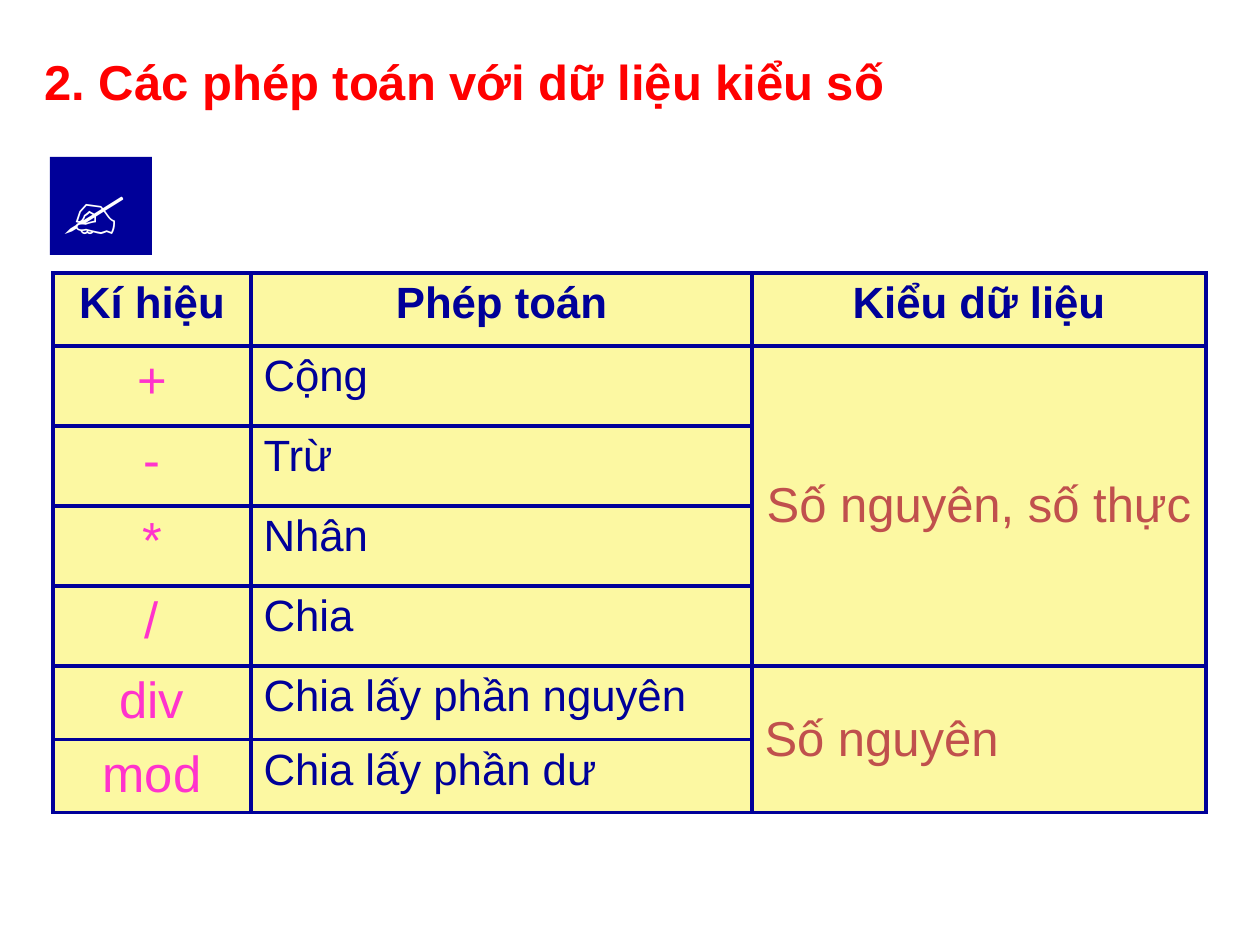
import pptx
import pptx.util
import pptx.dml.color
import pptx.enum.shapes
import pptx.enum.text
import pptx.oxml
import pptx.oxml.ns

EMU_PER_PX = 914400 / 126
FONT = "Arial"
COLORS = {
    "navy": "000099",
    "cream": "FCF8A2",
    "pink": "FF33CC",
    "brick": "C0504D",
    "red": "FF0000",
    "white": "FFFFFF",
}
ALIGN = pptx.enum.text.PP_ALIGN
ANCHOR = pptx.enum.text.MSO_ANCHOR

HEADERS = ["Kí hiệu", "Phép toán", "Kiểu dữ liệu"]
OPERATIONS = [
    ("+", "Cộng"),
    ("-", "Trừ"),
    ("*", "Nhân"),
    ("/", "Chia"),
    ("div", "Chia lấy phần nguyên"),
    ("mod", "Chia lấy phần dư"),
]
# first row, last row, text, alignment
DATA_TYPES = [
    (1, 4, "Số nguyên, số thực", ALIGN.CENTER),
    (5, 6, "Số nguyên", ALIGN.LEFT),
]
COLUMN_WIDTHS = [198, 501, 454]
ROW_HEIGHTS = [73, 80, 80, 80, 80, 74, 73]


def px(length):
    return pptx.util.Emu(round(length * EMU_PER_PX))


def rgb(name):
    return pptx.dml.color.RGBColor.from_string(COLORS[name])


def write(text_frame, text, size, color, align=ALIGN.LEFT, bold=False):
    text_frame.text = text
    paragraph = text_frame.paragraphs[0]
    paragraph.alignment = align
    font = paragraph.runs[0].font
    font.name = FONT
    font.size = pptx.util.Pt(size)
    font.bold = bold
    font.color.rgb = rgb(color)
    return paragraph


def add_title(slide, text):
    title = slide.shapes.title
    title.left, title.top, title.width, title.height = map(px, (32, 53, 1166, 63))
    paragraph = write(title.text_frame, text, 28, "red", bold=True)
    paragraph.line_spacing = 0.9
    title.text_frame.word_wrap = True
    title.text_frame.auto_size = pptx.enum.text.MSO_AUTO_SIZE.NONE
    title.text_frame.vertical_anchor = ANCHOR.MIDDLE


def add_icon_box(slide, symbol):
    box = slide.shapes.add_shape(
        pptx.enum.shapes.MSO_SHAPE.RECTANGLE, px(50), px(157), px(102), px(98))
    box.shadow.inherit = False
    box.fill.solid()
    box.fill.fore_color.rgb = rgb("navy")
    box.line.fill.background()
    write(box.text_frame, symbol, 40, "white")
    box.text_frame.word_wrap = True
    box.text_frame.vertical_anchor = ANCHOR.TOP


def style_cell(cell):
    cell.fill.solid()
    cell.fill.fore_color.rgb = rgb("cream")
    # Borders come before the fill in the cell properties
    properties = cell._tc.get_or_add_tcPr()
    for index, side in enumerate(("lnL", "lnR", "lnT", "lnB")):
        properties.insert(index, pptx.oxml.parse_xml(
            f'<a:{side} {pptx.oxml.ns.nsdecls("a")} w="{pptx.util.Pt(2.25)}">'
            f'<a:solidFill><a:srgbClr val="{COLORS["navy"]}"/></a:solidFill>'
            f'</a:{side}>'))


def add_operations_table(slide):
    table = slide.shapes.add_table(
        len(ROW_HEIGHTS), len(COLUMN_WIDTHS), px(53), px(273),
        px(sum(COLUMN_WIDTHS)), px(sum(ROW_HEIGHTS))).table
    table.first_row = False
    table.horz_banding = False
    for column, width in zip(table.columns, COLUMN_WIDTHS):
        column.width = px(width)
    for row, height in zip(table.rows, ROW_HEIGHTS):
        row.height = px(height)
    for cell in table.iter_cells():
        style_cell(cell)

    # Header row
    for column, header in enumerate(HEADERS):
        write(table.cell(0, column).text_frame, header, 25, "navy", ALIGN.CENTER, True)

    # Symbols and operation names
    for row, (symbol, operation) in enumerate(OPERATIONS, start=1):
        write(table.cell(row, 0).text_frame, symbol, 29, "pink", ALIGN.CENTER)
        write(table.cell(row, 1).text_frame, operation, 25, "navy")

    # Data types, each shared by several operations
    for first, last, data_type, align in DATA_TYPES:
        cell = table.cell(first, 2)
        cell.merge(table.cell(last, 2))
        cell.vertical_anchor = ANCHOR.MIDDLE
        write(cell.text_frame, data_type, 28, "brick", align)


def main():
    presentation = pptx.Presentation()
    presentation.slide_width = px(1260)
    presentation.slide_height = px(945)
    slide = presentation.slides.add_slide(presentation.slide_layouts[5])
    add_icon_box(slide, "✍")
    add_operations_table(slide)
    add_title(slide, "2. Các phép toán với dữ liệu kiểu số")
    presentation.save("out.pptx")


if __name__ == "__main__":
    main()
